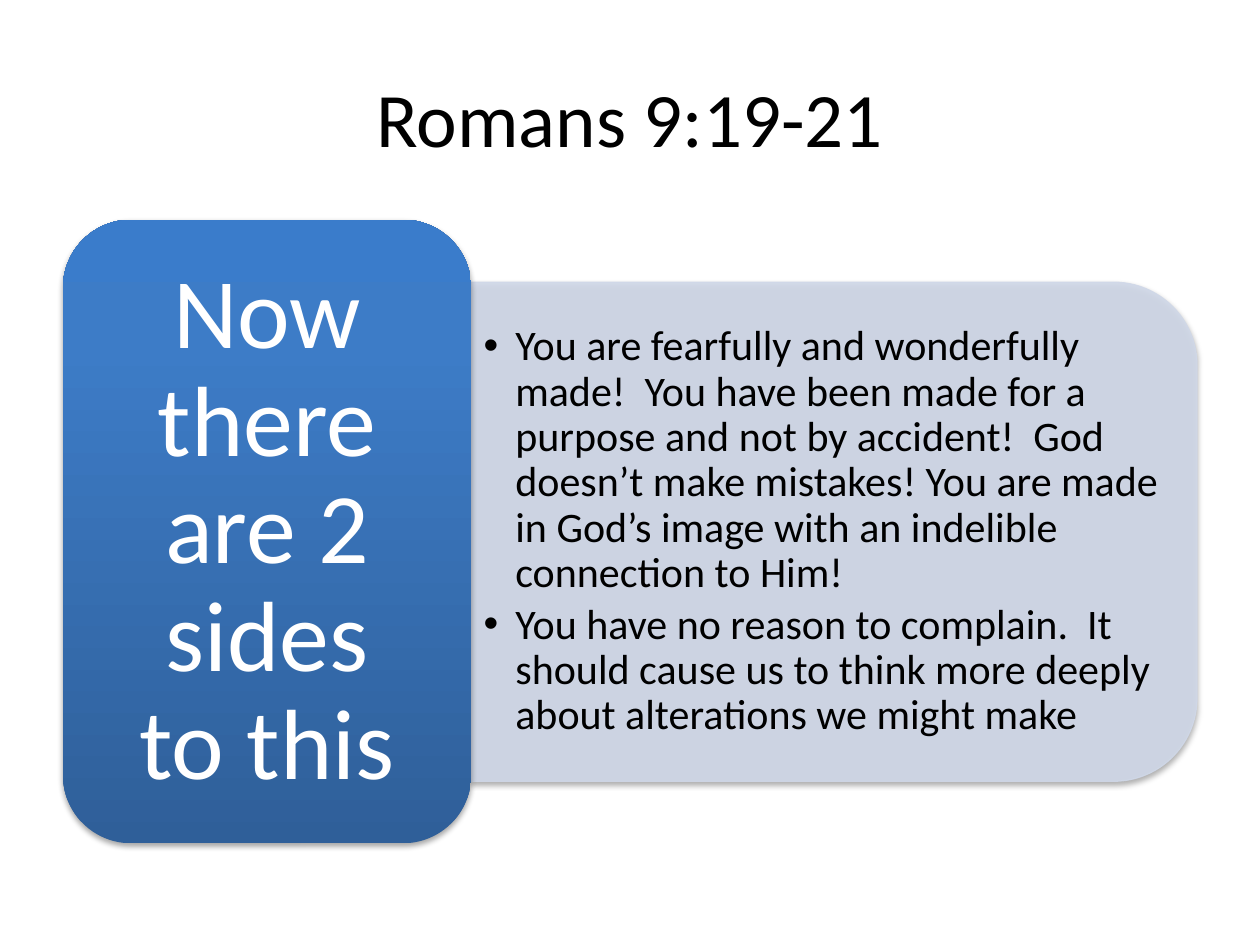
from dataclasses import dataclass

import pptx
import pptx.dml.color
import pptx.enum.shapes
import pptx.enum.text
import pptx.oxml
import pptx.oxml.ns
import pptx.util
from lxml import etree

Cm = pptx.util.Cm
Pt = pptx.util.Pt
qn = pptx.oxml.ns.qn
SHAPE = pptx.enum.shapes.MSO_SHAPE
ALIGN = pptx.enum.text.PP_ALIGN


@dataclass(frozen=True)
class Theme:
    font: str = "Calibri"
    dark: str = "000000"
    light: str = "FFFFFF"
    panel: str = "D0D8E8"
    panel_opacity: int = 90
    gradient: tuple = ((0, "2F5F99"), (80, "3D7CC7"), (100, "3A7CCB"))
    title_size: int = 44
    heading_size: int = 57
    point_size: int = 24


THEME = Theme()
HEADING = "Now there are 2 sides to this"
POINTS = (
    "You are fearfully and wonderfully made!  You have been made for a purpose "
    "and not by accident!  God doesn’t make mistakes! You are made in God’s image "
    "with an indelible connection to Him!",
    "You have no reason to complain.  It should cause us to think more deeply "
    "about alterations we might make",
)


def rgb(value):
    return pptx.dml.color.RGBColor.from_string(value)


def child(parent, tag, **attributes):
    return etree.SubElement(parent, qn(tag), **attributes)


def add_run(paragraph, text, size, color):
    run = paragraph.add_run()
    run.text = text
    run.font.name = THEME.font
    run.font.size = Pt(size)
    run.font.color.rgb = rgb(color)


def add_shadow(shape):
    shape.shadow.inherit = False
    effects = shape._element.spPr.find(qn("a:effectLst"))
    shadow = child(effects, "a:outerShdw", blurRad=str(Pt(3.1)), dist=str(Pt(1.8)),
                   dir="5400000", rotWithShape="0")
    color = child(shadow, "a:srgbClr", val=THEME.dark)
    child(color, "a:alpha", val="35000")


def add_text_box(shapes, left, top, width, height):
    frame = shapes.add_textbox(Cm(left), Cm(top), Cm(width), Cm(height)).text_frame
    frame.word_wrap = True
    frame.vertical_anchor = pptx.enum.text.MSO_ANCHOR.MIDDLE
    return frame


def set_title(slide, left, top, width, height):
    title = slide.shapes.title
    title.left, title.top = Cm(left), Cm(top)
    title.width, title.height = Cm(width), Cm(height)
    title.text_frame.vertical_anchor = pptx.enum.text.MSO_ANCHOR.MIDDLE
    paragraph = title.text_frame.paragraphs[0]
    paragraph.alignment = ALIGN.CENTER
    add_run(paragraph, "Romans 9:19-21", THEME.title_size, THEME.dark)


def add_points_panel(shapes, left, top, width, height):
    # Panel turned a quarter so that its rounded corners face right
    shift = (width - height) / 2
    panel = shapes.add_shape(SHAPE.ROUND_2_SAME_RECTANGLE, Cm(left + shift),
                             Cm(top - shift), Cm(height), Cm(width))
    panel.rotation = 90
    panel.fill.solid()
    panel.fill.fore_color.rgb = rgb(THEME.panel)
    panel.line.color.rgb = rgb(THEME.panel)
    panel.line.width = Pt(0.75)
    for color in panel._element.spPr.iter(qn("a:srgbClr")):
        child(color, "a:alpha", val=str(THEME.panel_opacity * 1000))
    add_shadow(panel)

    # Bulleted points, clear of the rounded corners
    inset = 0.49
    frame = add_text_box(shapes, left, top + inset, width - inset, height - 2 * inset)
    for index, point in enumerate(POINTS):
        paragraph = frame.add_paragraph() if index else frame.paragraphs[0]
        paragraph.level = 1
        paragraph.alignment = ALIGN.LEFT
        paragraph.line_spacing = 0.9
        paragraph.space_after = Pt(3.6)
        properties = paragraph._p.get_or_add_pPr()
        properties.set("marL", str(Cm(0.64)))
        properties.set("indent", str(-Cm(0.64)))
        child(properties, "a:buFont", typeface="Arial")
        child(properties, "a:buChar", char="•")
        add_run(paragraph, point, THEME.point_size, THEME.dark)


def add_heading_card(shapes, left, top, width, height):
    # Card with a three-stop gradient, darkest at the bottom
    card = shapes.add_shape(SHAPE.ROUNDED_RECTANGLE, Cm(left), Cm(top),
                            Cm(width), Cm(height))
    card.fill.gradient()
    card.fill.gradient_angle = 90
    stops = card._element.spPr.find(qn("a:gradFill")).find(qn("a:gsLst"))
    for stop in list(stops):
        stops.remove(stop)
    for position, color in THEME.gradient:
        child(child(stops, "a:gs", pos=str(position * 1000)), "a:srgbClr", val=color)
    card.line.fill.background()
    add_shadow(card)

    # Heading
    inset = 0.4
    frame = add_text_box(shapes, left + inset, top + inset,
                         width - 2 * inset, height - 2 * inset)
    frame.margin_left = frame.margin_right = Cm(0.6)
    frame.margin_top = frame.margin_bottom = Cm(0.3)
    paragraph = frame.paragraphs[0]
    paragraph.alignment = ALIGN.CENTER
    paragraph.line_spacing = 0.9
    add_run(paragraph, HEADING, THEME.heading_size, THEME.light)


def main():
    deck = pptx.Presentation()
    deck.slide_width, deck.slide_height = Cm(25.4), Cm(19.05)
    slide = deck.slides.add_slide(deck.slide_layouts[5])
    set_title(slide, 1.27, 0.76, 22.86, 3.18)
    group = slide.shapes.add_group_shape()
    add_points_panel(group.shapes, 9.5, 5.69, 14.63, 10.06)
    add_heading_card(group.shapes, 1.27, 4.43, 8.23, 12.57)
    deck.save("out.pptx")


if __name__ == "__main__":
    main()
